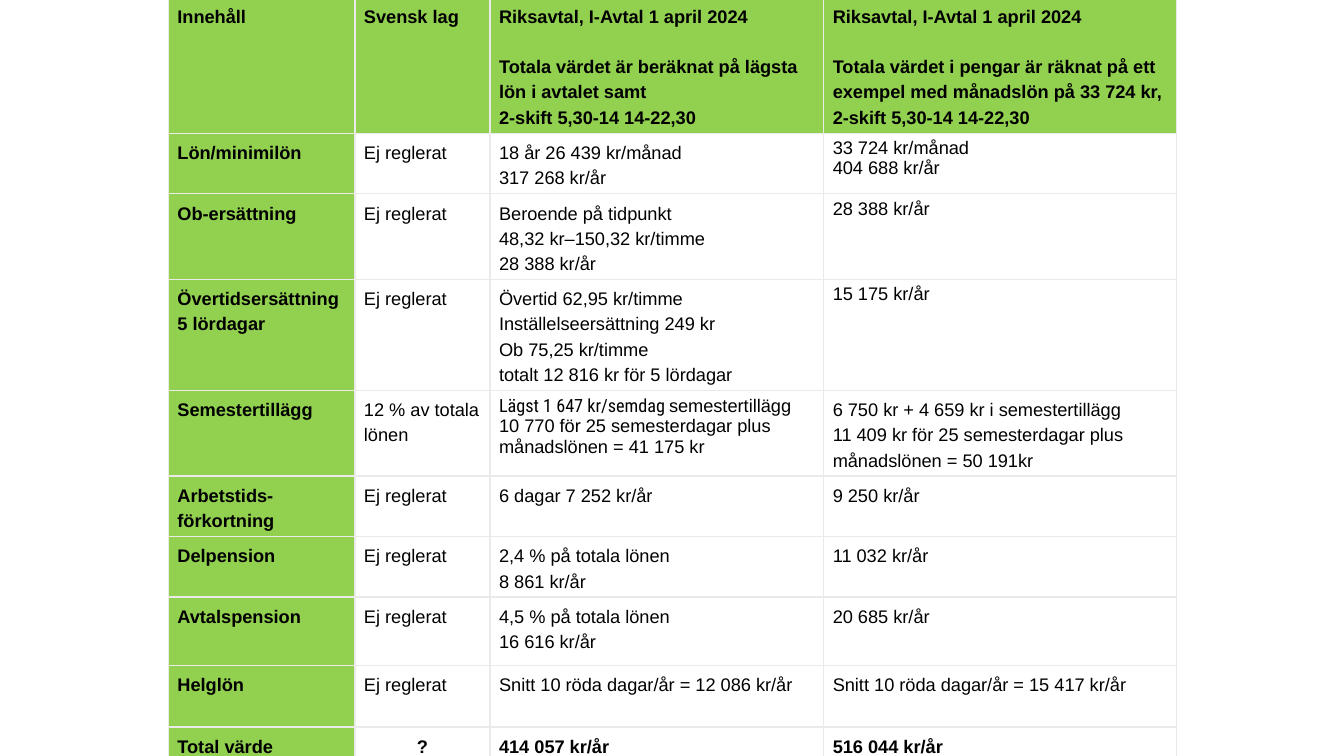
from lxml.etree import SubElement
from pptx import Presentation
from pptx.dml.color import RGBColor
from pptx.enum.text import PP_ALIGN as Align
from pptx.oxml.ns import qn
from pptx.util import Inches, Pt

COLUMN_WIDTHS = [1.85, 1.34, 3.31, 3.5]
ROW_HEIGHTS = [1.3, 0.57, 0.81, 1.06, 0.75, 0.57, 0.59, 0.68, 0.61, 0.54]
UNREGULATED = "Ej reglerat"
AGREEMENT = "Riksavtal, I-Avtal 1 april 2024"
ROWS = [
    ["Innehåll", "Svensk lag",
     AGREEMENT + "\nTotala värdet är beräknat på lägsta lön i avtalet samt\n2-skift 5,30-14 14-22,30",
     AGREEMENT + "\nTotala värdet i pengar är räknat på ett exempel med månadslön på 33 724 kr, "
     "2-skift 5,30-14 14-22,30"],
    ["Lön/minimilön", UNREGULATED, "18 år 26 439 kr/månad\n317 268 kr/år",
     "33 724 kr/månad\n404 688 kr/år"],
    ["Ob-ersättning", UNREGULATED,
     "Beroende på tidpunkt\n48,32 kr–150,32 kr/timme\n28 388 kr/år", "28 388 kr/år"],
    ["Övertidsersättning\n5 lördagar", UNREGULATED,
     "Övertid 62,95 kr/timme\nInställelseersättning 249 kr\nOb 75,25 kr/timme\n"
     "totalt 12 816 kr för 5 lördagar", "15 175 kr/år"],
    ["Semestertillägg", "12 % av totala lönen",
     "Lägst 1 647 kr/semdag |semestertillägg 10 770 för 25 semesterdagar plus "
     "månadslönen = 41 175 kr",
     "6 750 kr + 4 659 kr i semestertillägg\n"
     "11 409 kr för 25 semesterdagar plus månadslönen = 50 191kr"],
    ["Arbetstids-förkortning", UNREGULATED, "6 dagar 7 252 kr/år", "9 250 kr/år"],
    ["Delpension", UNREGULATED, "2,4 % på totala lönen\n8 861 kr/år", "11 032 kr/år"],
    ["Avtalspension", UNREGULATED, "4,5 % på totala lönen\n16 616 kr/år", "20 685 kr/år"],
    ["Helglön", UNREGULATED, "Snitt 10 röda dagar/år = 12 086 kr/år",
     "Snitt 10 röda dagar/år = 15 417 kr/år"],
    ["Total värde", "?", "414 057 kr/år", "516 044 kr/år"],
]
SINGLE_SPACED = {(1, 3), (2, 3), (3, 3), (4, 2)}


def color(value):
    return RGBColor.from_string(value)


def write(frame, text, fonts=("Arial",), size=13, bold=False, fill="000000",
          align=Align.LEFT, line_spacing=None, gap=0):
    """Newlines part paragraphs, bars part runs; gap follows the first paragraph."""
    frame.word_wrap = True
    for index, line in enumerate(text.split("\n")):
        paragraph = frame.paragraphs[0] if index == 0 else frame.add_paragraph()
        paragraph.alignment = align
        if line_spacing:
            paragraph.line_spacing = Pt(line_spacing)
        if index == 1 and gap:
            paragraph.space_before = Pt(gap)
        for part, font_name in zip(line.split("|"), fonts):
            run = paragraph.add_run()
            run.text = part
            run.font.name = font_name
            run.font.size = Pt(size)
            run.font.bold = bold
            run.font.color.rgb = color(fill)


class WageSlide:
    green = "92D050"
    border = "EAEAEA"
    line_spacing = 18

    def __init__(self, presentation):
        self.slide = presentation.slides.add_slide(presentation.slide_layouts[6])

    def add_borders(self, cell):
        properties = cell._tc.get_or_add_tcPr()
        for index, side in enumerate(("lnL", "lnR", "lnT", "lnB")):
            line = properties.makeelement(qn(f"a:{side}"), {"w": str(Pt(1))})
            properties.insert(index, line)
            solid = SubElement(line, qn("a:solidFill"))
            SubElement(solid, qn("a:srgbClr"), val=self.border)

    def add_cell(self, cell, text, row, column):
        header, total = row == 0, row == len(ROWS) - 1
        cell.margin_left = cell.margin_right = Inches(0.09)
        cell.margin_top = cell.margin_bottom = Inches(0.05)
        if header or column == 0:
            cell.fill.solid()
            cell.fill.fore_color.rgb = color(self.green)
        else:
            cell.fill.background()
        self.add_borders(cell)
        write(cell.text_frame, text,
              fonts=("Roboto Condensed", "Arial") if "|" in text else ("Arial",),
              bold=header or total or column == 0,
              align=Align.CENTER if total and column == 1 else Align.LEFT,
              line_spacing=None if (row, column) in SINGLE_SPACED else self.line_spacing,
              gap=self.line_spacing if header else 0)

    def add_table(self, left, top):
        table = self.slide.shapes.add_table(
            len(ROWS), len(COLUMN_WIDTHS), Inches(left), Inches(top),
            Inches(sum(COLUMN_WIDTHS)), Inches(sum(ROW_HEIGHTS))).table
        table.first_row = table.horz_banding = False
        for column, width in zip(table.columns, COLUMN_WIDTHS):
            column.width = Inches(width)
        for row, height in zip(table.rows, ROW_HEIGHTS):
            row.height = Inches(height)
        for row, texts in enumerate(ROWS):
            for column, text in enumerate(texts):
                self.add_cell(table.cell(row, column), text, row, column)


def main():
    presentation = Presentation()
    presentation.slide_width = Inches(13.33)
    presentation.slide_height = Inches(7.5)
    WageSlide(presentation).add_table(1.67, -0.03)
    presentation.save("out.pptx")


if __name__ == "__main__":
    main()
